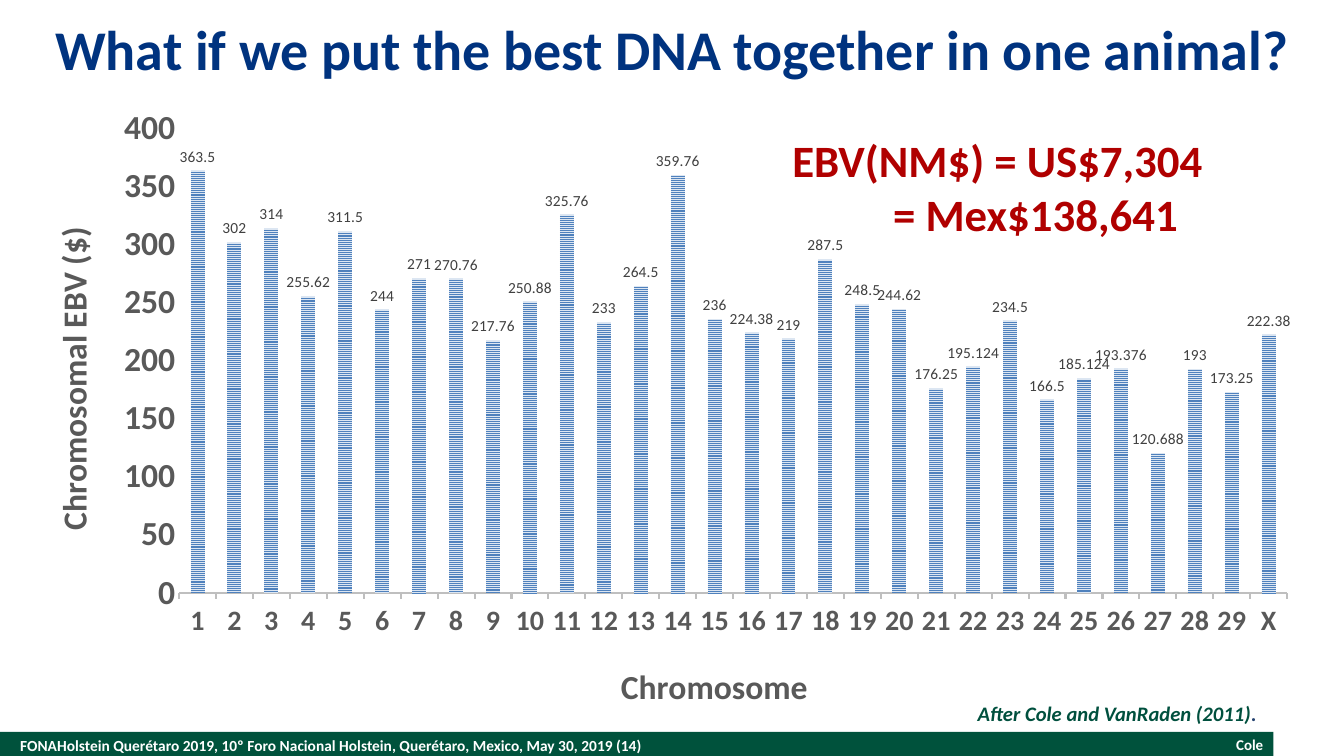
from dataclasses import dataclass

from lxml.etree import SubElement
from pptx import Presentation
from pptx.chart.data import CategoryChartData
from pptx.dml.color import RGBColor
from pptx.enum.chart import XL_CHART_TYPE, XL_LABEL_POSITION, XL_TICK_MARK
from pptx.enum.dml import MSO_PATTERN
from pptx.enum.shapes import MSO_SHAPE
from pptx.enum.text import MSO_ANCHOR, PP_ALIGN
from pptx.oxml.ns import qn
from pptx.util import Inches, Pt

FONT = "Calibri"
COLORS = {
    "title": "00337F", "footer": "00523C", "white": "FFFFFF", "source": "00503E",
    "stop": "244270", "result": "B00000", "axis": "595959", "axis_line": "BFBFBF",
    "label": "404040", "bar": "4F81BD", "bar_back": "DCE6F2",
}
EBVS = [
    363.5, 302, 314, 255.62, 311.5, 244, 271, 270.76, 217.76, 250.88,
    325.76, 233, 264.5, 359.76, 236, 224.38, 219, 287.5, 248.5, 244.62,
    176.25, 195.124, 234.5, 166.5, 185.124, 193.376, 120.688, 193, 173.25, 222.38,
]


@dataclass
class Label:
    text: str
    box: tuple[float, float, float, float]
    size: float
    color: str
    align: PP_ALIGN = PP_ALIGN.LEFT
    italic: bool = False
    inset: bool = False


FOOTERS = [
    Label("Cole", (9.6, 7.3, 2.93, 0.18), 10.7, "white", PP_ALIGN.RIGHT),
    Label("FONAHolstein Querétaro 2019, 10º Foro Nacional Holstein, Querétaro, Mexico, "
          "May 30, 2019 (14)", (0.2, 7.26, 8.67, 0.27), 11, "white"),
]
SOURCE = Label("After Cole and VanRaden (2011)", (9.04, 6.9, 3.52, 0.35), 14.7, "source",
               PP_ALIGN.RIGHT, italic=True, inset=True)
RESULT = Label("EBV(NM$) = US$7,304\v\t\t= Mex$138,641", (7.76, 1.27, 5.27, 1.18), 32,
               "result", inset=True)
TITLE = Label("What if we put the best DNA together in one animal?",
              (0.53, 0.13, 12.27, 0.7), 40, "title", PP_ALIGN.CENTER)


def rgb(name: str) -> RGBColor:
    return RGBColor.from_string(COLORS[name])


def style(font, size: float, color: str, bold: bool = True, italic: bool = False) -> None:
    """Apply the slide's typeface with the given size and colour."""
    font.name, font.size, font.bold, font.italic = FONT, Pt(size), bold, italic
    font.color.rgb = rgb(color)


def write(sp, label: Label) -> None:
    """Place a text shape and fill it with the label."""
    sp.left, sp.top, sp.width, sp.height = map(Inches, label.box)
    tf = sp.text_frame
    tf.word_wrap = True
    if not label.inset:
        tf.margin_left = tf.margin_top = tf.margin_right = tf.margin_bottom = 0
        tf.vertical_anchor = MSO_ANCHOR.MIDDLE
    tf.text = label.text
    p = tf.paragraphs[0]
    p.alignment = label.align
    for r in p.runs:
        style(r.font, label.size, label.color, italic=label.italic)


def add_label(s, label: Label):
    """Add a text box for the label."""
    sp = s.shapes.add_textbox(*map(Inches, label.box))
    write(sp, label)
    return sp


def set_layout(layout, **values) -> None:
    """Fill a chart layout element with fractions of the chart area."""
    for child in list(layout):
        layout.remove(child)
    manual = SubElement(layout, qn("c:manualLayout"))
    for tag, value in values.items():
        SubElement(manual, qn(f"c:{tag}")).set("val", str(value))


def format_axis(axis, title: str, size: float, x: float, y: float) -> None:
    """Style the tick labels and put the axis title at a fixed place."""
    axis.has_major_gridlines = False
    style(axis.tick_labels.font, size, "axis")
    tf = axis.axis_title.text_frame
    tf.text = title
    style(tf.paragraphs[0].runs[0].font, 24, "axis")
    element = axis.axis_title._element
    layout = element.find(qn("c:layout"))
    if layout is None:
        layout = element.makeelement(qn("c:layout"))
        element.find(qn("c:tx")).addnext(layout)
    set_layout(layout, xMode="edge", yMode="edge", x=x, y=y)


def add_ebv_chart(s) -> None:
    """Add the column chart of EBV by chromosome."""
    data = CategoryChartData()
    data.categories = [str(n) for n in range(1, len(EBVS))] + ["X"]
    data.add_series("Series 1", EBVS)
    box = map(Inches, (0.19, 0.94, 12.84, 6.28))
    chart = s.shapes.add_chart(XL_CHART_TYPE.COLUMN_CLUSTERED, *box, data).chart
    chart.has_legend = chart.has_title = False
    chart.font.name, chart.font.size = FONT, Pt(10)

    plot = chart.plots[0]
    plot.gap_width, plot.overlap, plot.vary_by_categories = 164, -22, False
    fill = plot.series[0].format.fill
    fill.patterned()
    fill.pattern = MSO_PATTERN.NARROW_HORIZONTAL
    fill.fore_color.rgb, fill.back_color.rgb = rgb("bar"), rgb("bar_back")
    plot.has_data_labels = True
    labels = plot.data_labels
    labels.show_value, labels.position = True, XL_LABEL_POSITION.OUTSIDE_END
    style(labels.font, 11, "label", bold=False)

    cat, val = chart.category_axis, chart.value_axis
    format_axis(cat, "Chromosome", 20, 0.46, 0.89)
    cat.major_tick_mark = XL_TICK_MARK.OUTSIDE
    cat.format.line.color.rgb = rgb("axis_line")
    cat.format.line.width = Pt(1.5)
    format_axis(val, "Chromosomal EBV ($)", 24, 0.02, 0.2)
    val.minimum_scale, val.maximum_scale, val.major_unit = 0, 400, 50
    val.major_tick_mark = XL_TICK_MARK.NONE
    val.format.line.fill.background()

    area = chart._chartSpace.chart.plotArea
    layout = area.find(qn("c:layout"))
    if layout is None:
        layout = area.makeelement(qn("c:layout"))
        area.insert(0, layout)
    set_layout(layout, layoutTarget="inner", xMode="edge", yMode="edge",
               x=0.1235, y=0.0526, w=0.856, h=0.7346)


def main() -> None:
    """Build the slide and save it."""
    prs = Presentation()
    prs.slide_width, prs.slide_height = Inches(13.33), Inches(7.5)
    s = prs.slides.add_slide(prs.slide_layouts[5])
    write(s.shapes.title, TITLE)

    bar = s.shapes.add_shape(MSO_SHAPE.RECTANGLE, *map(Inches, (0, 7.26, 12.63, 0.27)))
    bar.shadow.inherit = False
    bar.fill.solid()
    bar.fill.fore_color.rgb = rgb("footer")
    bar.line.fill.background()
    for label in FOOTERS:
        add_label(s, label)

    add_ebv_chart(s)
    source = add_label(s, SOURCE)
    r = source.text_frame.paragraphs[0].add_run()
    r.text = "."
    style(r.font, SOURCE.size, "stop")
    add_label(s, RESULT)
    prs.save("out.pptx")


if __name__ == "__main__":
    main()
